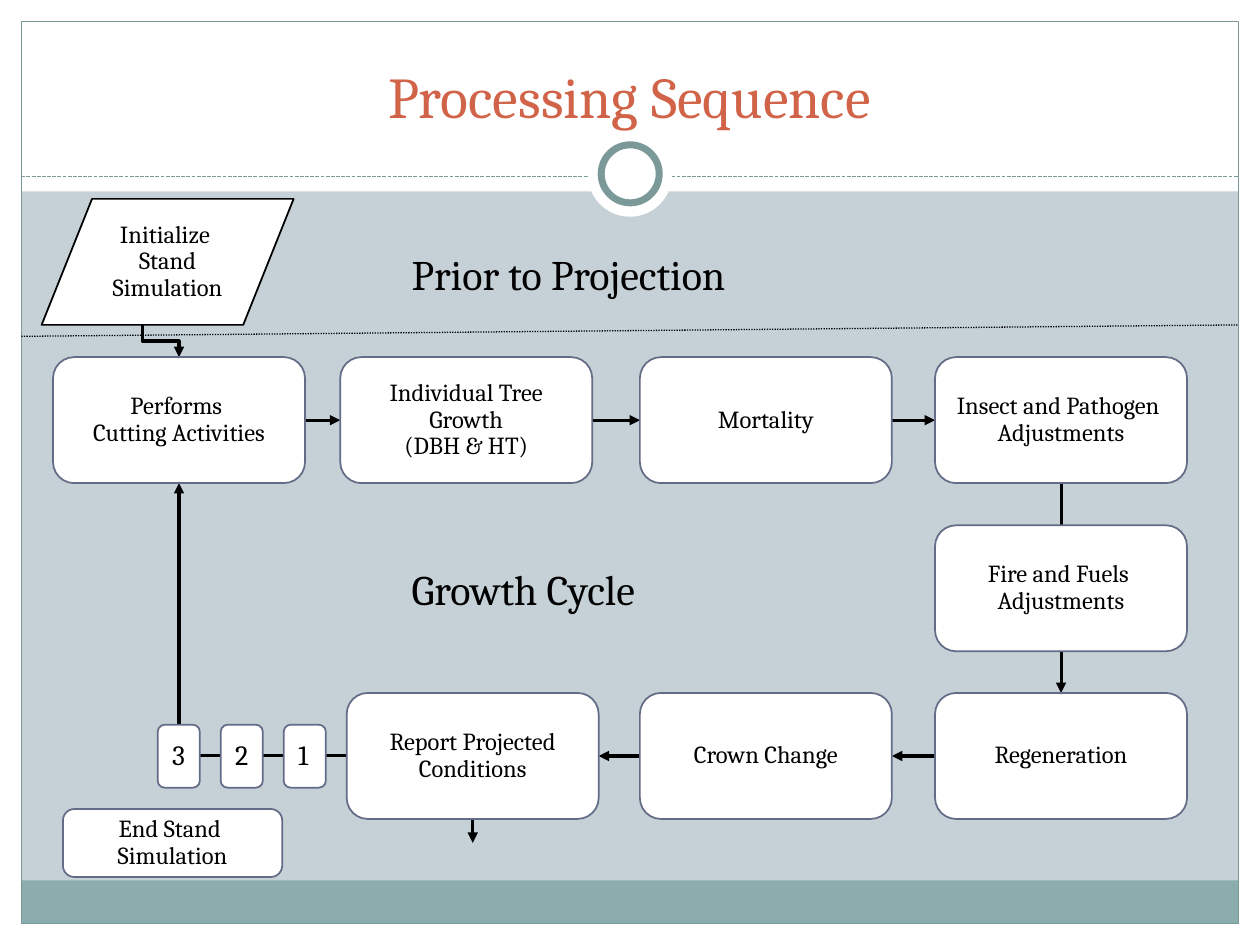
from typing import NamedTuple, Optional

from lxml import etree
from pptx import Presentation
from pptx.dml.color import RGBColor
from pptx.enum.dml import MSO_LINE
from pptx.enum.shapes import MSO_CONNECTOR, MSO_SHAPE
from pptx.enum.text import MSO_ANCHOR, PP_ALIGN
from pptx.oxml.ns import qn
from pptx.util import Cm, Pt

RECTANGLE = MSO_SHAPE.RECTANGLE
ROUNDED = MSO_SHAPE.ROUNDED_RECTANGLE
OVAL = MSO_SHAPE.OVAL
DATA = MSO_SHAPE.FLOWCHART_DATA
STRAIGHT, ELBOW = MSO_CONNECTOR.STRAIGHT, MSO_CONNECTOR.ELBOW
DASHED, DOTTED = MSO_LINE.SQUARE_DOT, MSO_LINE.ROUND_DOT
LEFT, CENTER = PP_ALIGN.LEFT, PP_ALIGN.CENTER
TOP, MIDDLE, BOTTOM = MSO_ANCHOR.TOP, MSO_ANCHOR.MIDDLE, MSO_ANCHOR.BOTTOM

WHITE, BLACK = "FFFFFF", "000000"
TEAL, BAND, BACKDROP = "7C999A", "8CADAE", "C5D1D7"
SLATE, RUST = "646B86", "D16349"
WIDTH, HEIGHT = 25.4, 19.05
MARGIN = 0.43
STEP_WIDTH, STEP_HEIGHT = 5.08, 2.54
COLUMNS = (1.07, 6.86, 12.9, 18.85)
ROWS = (7.2, 10.59, 13.97)
CENTERS = [left + STEP_WIDTH / 2 for left in COLUMNS]
MIDDLES = [top + STEP_HEIGHT / 2 for top in ROWS]
REPORT_LEFT = 6.99
INDENT = 0.97


class Panel(NamedTuple):
    left: float
    top: float
    width: float
    height: float
    fill: Optional[str] = WHITE
    outline: Optional[str] = None
    weight: float = 0.75
    kind: int = RECTANGLE


class Step(NamedTuple):
    left: float
    top: float
    lines: tuple
    width: float = STEP_WIDTH
    height: float = STEP_HEIGHT
    size: int = 14
    align: int = CENTER
    kind: int = ROUNDED
    outline: str = SLATE


class Link(NamedTuple):
    start: tuple
    end: tuple
    weight: float = 1.75
    color: str = BLACK
    dash: Optional[int] = None
    arrow: bool = True
    preset: str = "line"


FRAME = (
    Panel(0, HEIGHT - MARGIN, WIDTH, MARGIN),
    Panel(0, 0, WIDTH, 3.86),
    Panel(0, 0, MARGIN, HEIGHT),
    Panel(WIDTH - MARGIN, 0, MARGIN, HEIGHT),
    Panel(MARGIN, 17.75, WIDTH - 2 * MARGIN, 0.87, BAND),
    Panel(MARGIN, MARGIN, WIDTH - 2 * MARGIN, HEIGHT - 2 * MARGIN, None, TEAL),
)
RINGS = (
    Panel(11.85, 2.67, 1.7, 1.7, kind=OVAL),
    Panel(12.12, 2.92, 1.17, 1.17, outline=TEAL, weight=4, kind=OVAL),
)
HEADER_RULE = Link((MARGIN, 3.56), (WIDTH - MARGIN, 3.56), 0.75, TEAL, DASHED, False)
PHASE_RULE = Link((MARGIN, 6.78), (WIDTH - MARGIN, 6.55), 0.75, BLACK, DOTTED, False)
LINKS = (
    Link((2.87, 6.55), (CENTERS[0], ROWS[0]), preset="bentConnector3"),
    Link((COLUMNS[0] + STEP_WIDTH, MIDDLES[0]), (COLUMNS[1], MIDDLES[0])),
    Link((COLUMNS[1] + STEP_WIDTH, MIDDLES[0]), (COLUMNS[2], MIDDLES[0])),
    Link((COLUMNS[2] + STEP_WIDTH, MIDDLES[0]), (COLUMNS[3], MIDDLES[0])),
    Link((CENTERS[3], ROWS[1]), (CENTERS[3], ROWS[0])),
    Link((CENTERS[3], ROWS[1] + STEP_HEIGHT), (CENTERS[3], ROWS[2])),
    Link((COLUMNS[3], MIDDLES[2]), (COLUMNS[2] + STEP_WIDTH, MIDDLES[2])),
    Link((COLUMNS[2], MIDDLES[2]), (REPORT_LEFT + STEP_WIDTH, MIDDLES[2])),
    Link((9.53, ROWS[2] + STEP_HEIGHT), (9.53, 16.99)),
    Link((REPORT_LEFT, MIDDLES[2]), (CENTERS[0], ROWS[0] + STEP_HEIGHT), preset="bentConnector2"),
)
STEPS = [
    Step(0.84, 4.01, ("Initialize ", "Stand", "Simulation"), kind=DATA, outline=BLACK),
    Step(COLUMNS[0], ROWS[0], ("Performs ", "Cutting Activities")),
    Step(COLUMNS[1], ROWS[0], (" Individual Tree ", "Growth", "(DBH & HT)")),
    Step(COLUMNS[2], ROWS[0], ("Mortality",)),
    Step(COLUMNS[3], ROWS[0], ("Insect and Pathogen ", "Adjustments")),
    Step(COLUMNS[3], ROWS[1], ("Fire and Fuels ", "Adjustments")),
    Step(COLUMNS[3], ROWS[2], ("Regeneration",)),
    Step(COLUMNS[2], ROWS[2], ("Crown Change",)),
    Step(REPORT_LEFT, ROWS[2], ("Report Projected", "Conditions")),
    Step(1.27, 16.31, ("End Stand ", "Simulation"), 4.42, 1.37),
] + [
    Step(6.99 - 1.27 * number, 14.61, (str(number),), 0.85, 1.27, 16, LEFT)
    for number in (1, 2, 3)
]


def rgb(value: str) -> RGBColor:
    return RGBColor.from_string(value)


def place(box, left: float, top: float, width: float, height: float) -> None:
    values = {"left": left, "top": top, "width": width, "height": height}
    for name, value in values.items():
        setattr(box, name, Cm(value))


def write(box, lines, size, align, anchor, color=BLACK, hanging=True, spacing=None, before=0) -> None:
    frame = box.text_frame
    frame.word_wrap = True
    frame.vertical_anchor = anchor
    font_format = {"name": "Cambria", "size": Pt(size), "bold": False}
    para_format = {"alignment": align, "line_spacing": spacing, "space_before": Pt(before)}
    for index, line in enumerate(lines):
        para = frame.add_paragraph() if index else frame.paragraphs[0]
        for name, value in para_format.items():
            setattr(para, name, value)
        if hanging:
            properties = para._p.get_or_add_pPr()
            properties.set("marL", str(Cm(INDENT)))
            properties.set("indent", str(Cm(-INDENT)))
        span = para.add_run()
        span.text = line
        for name, value in font_format.items():
            setattr(span.font, name, value)
        span.font.color.rgb = rgb(color)


def draw_panel(page, panel: Panel):
    box = page.shapes.add_shape(panel.kind, *map(Cm, panel[:4]))
    box.shadow.inherit = False
    if panel.fill:
        box.fill.solid()
        box.fill.fore_color.rgb = rgb(panel.fill)
    else:
        box.fill.background()
    if panel.outline:
        box.line.color.rgb = rgb(panel.outline)
        box.line.width = Pt(panel.weight)
    else:
        box.line.fill.background()
    return box


def draw_step(page, step: Step) -> None:
    box = draw_panel(page, Panel(step.left, step.top, step.width, step.height,
                                 outline=step.outline, weight=1, kind=step.kind))
    if step.kind == ROUNDED:
        box.adjustments[0] = 0.167
    write(box, step.lines, step.size, step.align, MIDDLE, spacing=0.9)


def draw_link(page, link: Link) -> None:
    (x1, y1), (x2, y2) = link.start, link.end
    turned = link.preset == "bentConnector3"
    if turned:
        across, down = (x2 - x1) / 2, (y2 - y1) / 2
        x, y = x1 + across, y1 + down
        x1, y1, x2, y2 = x + down, y - across, x - down, y + across
    kind = STRAIGHT if link.preset == "line" else ELBOW
    line = page.shapes.add_connector(kind, *map(Cm, (x1, y1, x2, y2)))
    properties = line.element.spPr
    properties.find(qn("a:prstGeom")).set("prst", link.preset)
    if turned:
        properties.find(qn("a:xfrm")).set("rot", str(270 * 60000))
    line.line.color.rgb = rgb(link.color)
    line.line.width = Pt(link.weight)
    if link.dash:
        line.line.dash_style = link.dash
    if link.arrow:
        etree.SubElement(properties.find(qn("a:ln")), qn("a:tailEnd"), type="triangle")
    etree.SubElement(properties, qn("a:effectLst"))


def draw_label(page, text: str, left: float, top: float, width: float) -> None:
    box = page.shapes.add_textbox(Cm(left), Cm(top), Cm(width), Cm(1.28))
    write(box, (text,), 24, LEFT, TOP, before=12)


def main() -> None:
    deck = Presentation()
    deck.slide_width, deck.slide_height = Cm(WIDTH), Cm(HEIGHT)
    page = deck.slides.add_slide(deck.slide_layouts[5])
    page.background.fill.solid()
    page.background.fill.fore_color.rgb = rgb(BACKDROP)
    for panel in FRAME:
        draw_panel(page, panel)
    draw_link(page, HEADER_RULE)
    for ring in RINGS:
        draw_panel(page, ring)
    title = page.shapes.title
    title.element.getparent().append(title.element)
    place(title, 0.84, 0.64, 23.7, 2.11)
    write(title, ("Processing Sequence",), 33, CENTER, BOTTOM, RUST, False)
    for link in (*LINKS, PHASE_RULE):
        draw_link(page, link)
    for step in STEPS:
        draw_step(page, step)
    draw_label(page, "Growth Cycle", 8.05, 11.23, 6.35)
    draw_label(page, "Prior to Projection", 8.05, 4.88, 7.62)
    deck.save("out.pptx")


if __name__ == "__main__":
    main()
